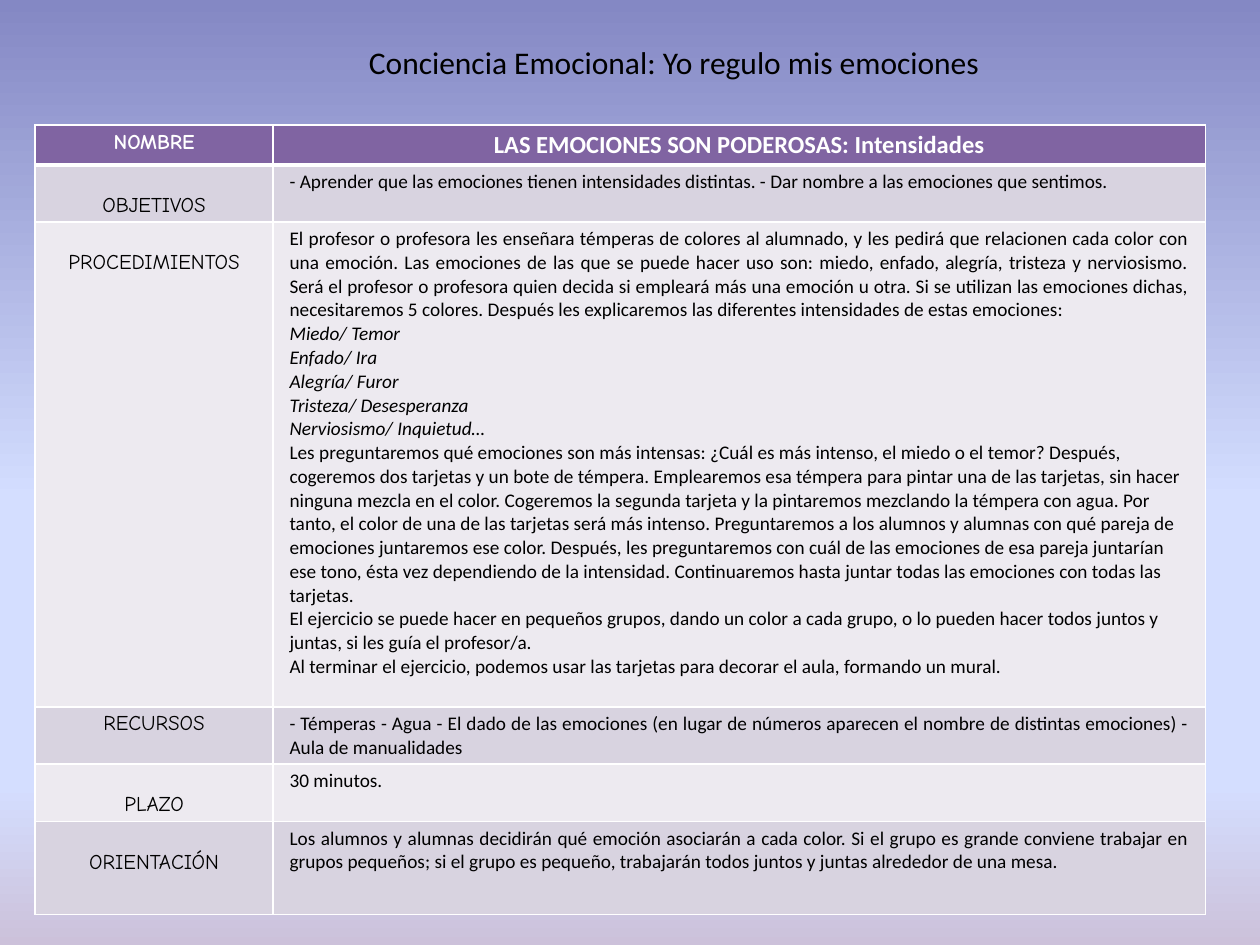
from copy import deepcopy

from lxml import etree
from pptx import Presentation
from pptx.dml.color import RGBColor
from pptx.enum.text import MSO_ANCHOR, MSO_AUTO_SIZE, PP_ALIGN
from pptx.oxml.ns import qn
from pptx.util import Pt

LEFT, CENTER, JUSTIFY = PP_ALIGN.LEFT, PP_ALIGN.CENTER, PP_ALIGN.JUSTIFY
TOP, MIDDLE = MSO_ANCHOR.TOP, MSO_ANCHOR.MIDDLE
FIT_SHAPE = MSO_AUTO_SIZE.SHAPE_TO_FIT_TEXT

BLACK = RGBColor(0x00, 0x00, 0x00)
WHITE = RGBColor(0xFF, 0xFF, 0xFF)
PURPLE = RGBColor(0x80, 0x64, 0xA2)
BANDS = (RGBColor(0xD8, 0xD3, 0xE0), RGBColor(0xED, 0xEA, 0xF0))
SKY = (
    (0, RGBColor(0x84, 0x88, 0xC4)),
    (0.53, RGBColor(0xD4, 0xDE, 0xFF)),
    (0.83, RGBColor(0xD4, 0xDE, 0xFF)),
    (1, RGBColor(0xCC, 0xC1, 0xDA)),
)
BODY_FONT, LABEL_FONT = "Calibri", "Comic Neue"
INSET_X, INSET_Y, LABEL_DROP = 9.36, 2.88, 13.5

TITLE = "Conciencia Emocional: Yo regulo mis emociones"
HEADER = ("NOMBRE", "LAS EMOCIONES SON PODEROSAS: Intensidades")
PROCEDURE = [
    ("El profesor o profesora les enseñara témperas de colores al alumnado, y les pedirá "
     "que relacionen cada color con una emoción. Las emociones de las que se puede hacer uso "
     "son: miedo, enfado, alegría, tristeza y nerviosismo. Será el profesor o profesora quien "
     "decida si empleará más una emoción u otra. Si se utilizan las emociones dichas, "
     "necesitaremos 5 colores. Después les explicaremos las diferentes intensidades de estas "
     "emociones:", JUSTIFY, False),
    *((pair, JUSTIFY, True) for pair in (
        "Miedo/ Temor", "Enfado/ Ira", "Alegría/ Furor",
        "Tristeza/ Desesperanza", "Nerviosismo/ Inquietud…")),
    ("Les preguntaremos qué emociones son más intensas: ¿Cuál es más intenso, el miedo o el "
     "temor? Después, cogeremos dos tarjetas y un bote de témpera. Emplearemos esa témpera "
     "para pintar una de las tarjetas, sin hacer ninguna mezcla en el color. Cogeremos la "
     "segunda tarjeta y la pintaremos mezclando la témpera con agua. Por tanto, el color de "
     "una de las tarjetas será más intenso. Preguntaremos a los alumnos y alumnas con qué "
     "pareja de emociones juntaremos ese color. Después, les preguntaremos con cuál de las "
     "emociones de esa pareja juntarían ese tono, ésta vez dependiendo de la intensidad. "
     "Continuaremos hasta juntar todas las emociones con todas las tarjetas.", LEFT, False),
    ("El ejercicio se puede hacer en pequeños grupos, dando un color a cada grupo, o lo pueden "
     "hacer todos juntos y juntas, si les guía el profesor/a.", LEFT, False),
    ("Al terminar el ejercicio, podemos usar las tarjetas para decorar el aula, formando un "
     "mural.", LEFT, False),
]
SECTIONS = [
    ("OBJETIVOS", LABEL_DROP, [
        ("- Aprender que las emociones tienen intensidades distintas. - Dar nombre a las "
         "emociones que sentimos.", JUSTIFY, False)]),
    ("PROCEDIMIENTOS", LABEL_DROP, PROCEDURE),
    ("RECURSOS", 0, [
        ("- Témperas - Agua - El dado de las emociones (en lugar de números aparecen el nombre "
         "de distintas emociones) - Aula de manualidades", JUSTIFY, False)]),
    ("PLAZO", LABEL_DROP, [("30 minutos.", LEFT, False)]),
    ("ORIENTACIÓN", LABEL_DROP, [
        ("Los alumnos y alumnas decidirán qué emoción asociarán a cada color. Si el grupo es "
         "grande conviene trabajar en grupos pequeños; si el grupo es pequeño, trabajarán todos "
         "juntos y juntas alrededor de una mesa.", JUSTIFY, False)]),
]
COLUMN_WIDTHS = (136.1, 532.8)
ROW_HEIGHTS = (22.9, 32.6, 277, 32.6, 33, 53)


def paint_sky(slide):
    fill = slide.background.fill
    fill.gradient()
    fill.gradient_angle = 270
    stop_list = slide.element.find(".//" + qn("a:gsLst"))
    template_stop = deepcopy(stop_list[0])
    for old_stop in list(stop_list):
        stop_list.remove(old_stop)
    for _ in SKY:
        stop_list.append(deepcopy(template_stop))
    for stop, (position, color) in zip(fill.gradient_stops, SKY):
        stop.position = position
        stop.color.rgb = color


def format_paragraph(paragraph, text, font_name, size, color, align, bold=False, italic=False):
    paragraph.text = text
    paragraph.alignment = align
    font = paragraph.font
    font.name, font.size, font.bold, font.italic = font_name, Pt(size), bold, italic
    font.color.rgb = color


def place_title(slide, left, top, width, height):
    title = slide.shapes.title
    title.left, title.top, title.width, title.height = map(Pt, (left, top, width, height))
    frame = title.text_frame
    frame.word_wrap = True
    frame.auto_size = FIT_SHAPE
    frame.vertical_anchor = MIDDLE
    format_paragraph(frame.paragraphs[0], TITLE, BODY_FONT, 18, BLACK, CENTER)


def style_cell(cell, color, bottom_border=1, top_border=1, drop=0):
    cell.margin_left = cell.margin_right = Pt(INSET_X)
    cell.margin_top = Pt(INSET_Y + drop)
    cell.margin_bottom = Pt(0 if drop else INSET_Y)
    cell.vertical_anchor = TOP
    properties = cell._tc.get_or_add_tcPr()
    for side, width in (("L", 1), ("R", 1), ("T", top_border), ("B", bottom_border)):
        line = etree.SubElement(properties, qn("a:ln" + side), w=str(Pt(width)))
        line_fill = etree.SubElement(line, qn("a:solidFill"))
        etree.SubElement(line_fill, qn("a:srgbClr"), val=str(WHITE))
    cell.fill.solid()
    cell.fill.fore_color.rgb = color


def fill_header(name_cell, activity_cell):
    for cell, text, font_name, size in (
        (name_cell, HEADER[0], LABEL_FONT, 12),
        (activity_cell, HEADER[1], BODY_FONT, 14),
    ):
        style_cell(cell, PURPLE, bottom_border=3)
        format_paragraph(cell.text_frame.paragraphs[0], text, font_name, size, WHITE, CENTER,
                         bold=True)


def fill_section(label_cell, content_cell, section, band, top_border):
    label, drop, content = section
    style_cell(label_cell, band, top_border=top_border, drop=drop)
    format_paragraph(label_cell.text_frame.paragraphs[0], label, LABEL_FONT, 12, BLACK, CENTER)
    style_cell(content_cell, band, top_border=top_border)
    frame = content_cell.text_frame
    for index, (text, align, italic) in enumerate(content):
        paragraph = frame.add_paragraph() if index else frame.paragraphs[0]
        format_paragraph(paragraph, text, BODY_FONT, 11, BLACK, align, italic=italic)


def place_activity_table(slide, left, top, width, height):
    table = slide.shapes.add_table(
        len(ROW_HEIGHTS), len(COLUMN_WIDTHS), Pt(left), Pt(top), Pt(width), Pt(height)
    ).table
    for column, column_width in zip(table.columns, COLUMN_WIDTHS):
        column.width = Pt(column_width)
    for row, row_height in zip(table.rows, ROW_HEIGHTS):
        row.height = Pt(row_height)
    fill_header(table.cell(0, 0), table.cell(0, 1))
    for index, section in enumerate(SECTIONS):
        row = index + 1
        fill_section(table.cell(row, 0), table.cell(row, 1), section,
                     BANDS[index % 2], 1 if index else 3)


def main():
    deck = Presentation()
    deck.slide_width, deck.slide_height = Pt(720), Pt(540)
    slide = deck.slides.add_slide(deck.slide_layouts[5])
    paint_sky(slide)
    place_activity_table(slide, 20, 71.5, sum(COLUMN_WIDTHS), sum(ROW_HEIGHTS))
    place_title(slide, 184, 21, 402.5, 29)
    deck.save("out.pptx")


if __name__ == "__main__":
    main()
